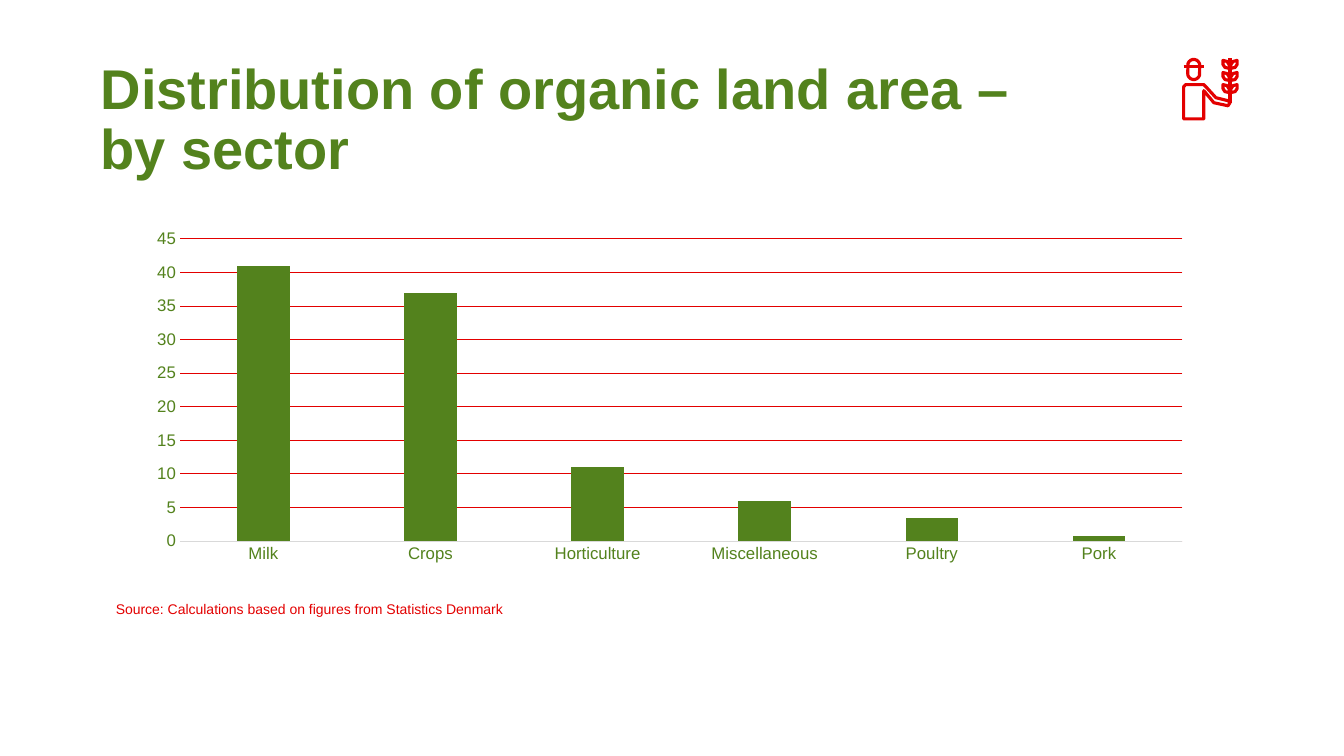
from dataclasses import dataclass
from math import cos, radians, sin

from pptx import Presentation, util as u
from pptx.chart.data import CategoryChartData
from pptx.dml.color import RGBColor
from pptx.enum import chart as ch, text
from pptx.oxml import parse_xml
from pptx.oxml.ns import nsdecls


@dataclass(frozen=True)
class Theme:
    green: str = "53821D"
    red: str = "E30000"
    grey: str = "D9D9D9"
    font: str = "Arial"
    title: float = 40
    axis: float = 12
    note: float = 10
    hairline: float = 0.75
    icon_line: float = 2.25


def style_font(font, theme, size, color, bold=False):
    font.name, font.size, font.bold = theme.font, u.Pt(size), bold
    font.color.rgb = RGBColor.from_string(color)


def style_line(line, width, color):
    line.width = u.Pt(width)
    line.color.rgb = RGBColor.from_string(color)


class SlideBuilder:
    def __init__(self, s, theme):
        self.s, self.theme = s, theme

    def text(self, content, box, *, size, color, bold=False, wrap=True,
             anchor=text.MSO_ANCHOR.TOP, spacing=1.0):
        sp = self.s.shapes.add_textbox(*map(u.Inches, box))
        tf = sp.text_frame
        tf.word_wrap, tf.vertical_anchor = wrap, anchor
        p = tf.paragraphs[0]
        p.text, p.line_spacing = content, spacing
        for r in p.runs:
            style_font(r.font, self.theme, size, color, bold)

    def column_chart(self, name, values, box, plot):
        """Draw one series; plot is the inner plot area as shares of the box."""
        t = self.theme
        data = CategoryChartData()
        data.categories = list(values)
        data.add_series(name, list(values.values()))
        chart = self.s.shapes.add_chart(
            ch.XL_CHART_TYPE.COLUMN_CLUSTERED, *map(u.Inches, box), data).chart
        chart.has_legend = chart.has_title = False
        style_font(chart.font, t, t.axis, t.green)

        columns = chart.plots[0]
        columns.gap_width, columns.overlap = 219, -27
        columns.vary_by_categories = False
        fill = columns.series[0].format.fill
        fill.solid()
        fill.fore_color.rgb = RGBColor.from_string(t.green)

        for axis in (chart.category_axis, chart.value_axis):
            axis.major_tick_mark = axis.minor_tick_mark = ch.XL_TICK_MARK.NONE
            style_font(axis.tick_labels.font, t, t.axis, t.green)
        style_line(chart.category_axis.format.line, t.hairline, t.grey)
        axis = chart.value_axis
        axis.minimum_scale, axis.maximum_scale, axis.major_unit = 0, 45, 5
        axis.format.line.fill.background()
        style_line(axis.major_gridlines.format.line, t.hairline, t.red)

        area = chart._chartSpace.chart.plotArea
        for layout in area.findall("{*}layout"):
            area.remove(layout)
        sizes = "".join(f'<c:{k} val="{v}"/>' for k, v in zip("xywh", plot))
        area.insert(0, parse_xml(
            f'<c:layout {nsdecls("c")}><c:manualLayout>'
            '<c:layoutTarget val="inner"/><c:xMode val="edge"/>'
            f'<c:yMode val="edge"/>{sizes}</c:manualLayout></c:layout>'))

    def outline(self, contours):
        """Draw (points, closed) contours as one unfilled shape."""
        builder = None
        for points, closed in contours:
            first, *rest = [(u.Inches(x), u.Inches(y)) for x, y in points]
            if builder is None:
                builder = self.s.shapes.build_freeform(*first)
            else:
                builder.move_to(*first)
            builder.add_line_segments(rest, close=closed)
        sp = builder.convert_to_shape()
        sp.shadow.inherit = False
        sp.fill.background()
        style_line(sp.line, self.theme.icon_line, self.theme.red)


def farmer_contours():
    """Farmer in a hat holding an ear of grain."""
    head = []
    for angle in range(0, 360, 20):
        dx, dy = cos(radians(angle)), sin(radians(angle))
        head.append((11.84 + 0.06 * dx, (0.73 if dy > 0 else 0.65) + 0.06 * dy))
    brim = [(11.74, 0.66), (11.94, 0.66)]
    body = [(11.74, 1.18), (11.74, 0.86), (11.76, 0.84), (11.94, 0.84),
            (11.96, 0.86), (12.06, 0.97), (12.18, 1), (12.2, 1.02),
            (12.18, 1.05), (12.04, 1.02), (11.94, 0.9), (11.94, 1.18)]
    stem_x = 12.2
    stem = [(stem_x, 0.58), (stem_x, 1.02)]
    leaf = [(0, 0.68), (0.05, 0.67), (0.07, 0.64), (0.07, 0.6),
            (0.03, 0.61), (0.01, 0.64)]
    leaves = [([(stem_x + side * x, y + row * 0.12) for x, y in leaf], True)
              for row in range(3) for side in (-1, 1)]
    return [(head, True), (brim, False), (body, True), (stem, False), *leaves]


def main():
    prs = Presentation()
    prs.slide_width, prs.slide_height = u.Inches(13.33), u.Inches(7.5)
    theme = Theme()
    slide = SlideBuilder(prs.slides.add_slide(prs.slide_layouts[6]), theme)
    slide.text("Distribution of organic land area –\vby sector",
               (0.9, 0.62, 11.47, 1.17), size=theme.title, color=theme.green,
               bold=True, anchor=text.MSO_ANCHOR.MIDDLE, spacing=0.9)
    sectors = {"Milk": 41, "Crops": 37, "Horticulture": 11,
               "Miscellaneous": 6, "Poultry": 3.5, "Pork": 0.8}
    slide.column_chart("Series 1", sectors, (0.9, 2.17, 11.05, 4),
                       plot=(0.08, 0.05, 0.9, 0.75))
    slide.outline(farmer_contours())
    slide.text("Source: Calculations based on figures from Statistics Denmark",
               (1.05, 5.91, 4.07, 0.27), size=theme.note, color=theme.red,
               wrap=False)
    prs.save("out.pptx")


if __name__ == "__main__":
    main()
